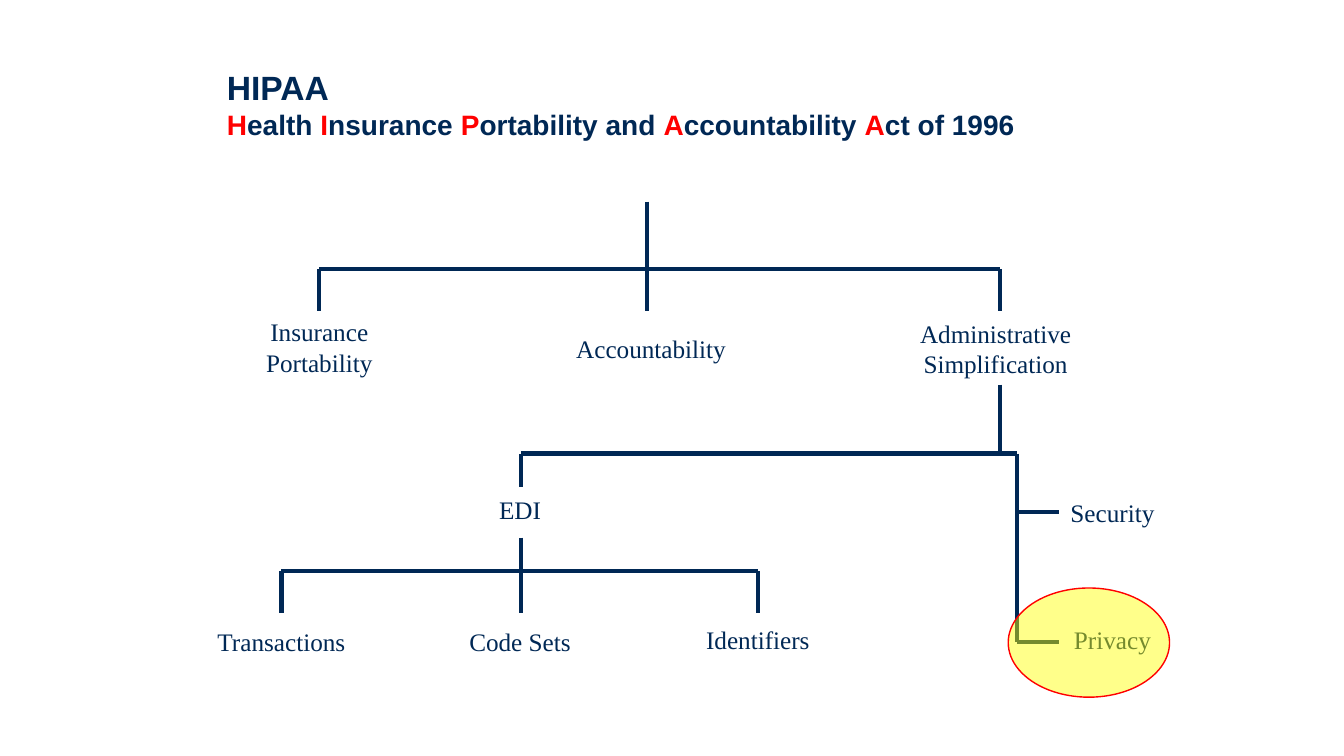
import pptx
import pptx.util
import pptx.dml.color
import pptx.enum.shapes
import pptx.enum.text
import pptx.oxml
import pptx.oxml.ns

RGB = pptx.dml.color.RGBColor
THEME = {
    "navy": RGB(0x00, 0x28, 0x55), "red": RGB(0xFF, 0x00, 0x00),
    "yellow": RGB(0xFF, 0xFF, 0x00), "opacity": 46,
    "title_font": "Arial", "label_font": "Times New Roman",
    "title_size": 24, "subtitle_size": 20, "label_size": 18,
    "line": 3, "outline": 1,
}

prs = pptx.Presentation()
prs.slide_width, prs.slide_height = pptx.util.Inches(13.33), pptx.util.Inches(7.5)
s = prs.slides.add_slide(prs.slide_layouts[5])

# Square grid: 90 rows to the slide's height, about 160 columns across
CELL = prs.slide_height / 90


def grid(*cells):
    return [round(c * CELL) for c in cells]


def add_line(*ends):
    c = s.shapes.add_connector(pptx.enum.shapes.MSO_CONNECTOR.STRAIGHT, *grid(*ends))
    c.line.color.rgb = THEME["navy"]
    c.line.width = pptx.util.Pt(THEME["line"])
    pptx.oxml.ns.qn("a:effectLst")
    c._element.spPr.append(pptx.oxml.parse_xml(
        "<a:effectLst %s/>" % pptx.oxml.ns.nsdecls("a")))


# Title, with the initials of the act in red
title = s.shapes.title
title.left, title.top, title.width, title.height = grid(27, 8, 102, 15)
tf = title.text_frame
for name, value in {
    "margin_left": 0, "margin_top": 0, "margin_right": 0, "margin_bottom": 0,
    "word_wrap": True, "auto_size": pptx.enum.text.MSO_AUTO_SIZE.NONE,
    "vertical_anchor": pptx.enum.text.MSO_ANCHOR.TOP,
}.items():
    setattr(tf, name, value)
p = tf.paragraphs[0]
p.alignment = pptx.enum.text.PP_ALIGN.LEFT
title_runs = [("HIPAA", "title_size", "navy")]
for initial, rest in [("H", "ealth "), ("I", "nsurance "), ("P", "ortability and "),
                      ("A", "ccountability "), ("A", "ct of 1996")]:
    title_runs += [(initial, "subtitle_size", "red"), (rest, "subtitle_size", "navy")]
for i, (text, size, color) in enumerate(title_runs):
    if i == 1:
        p.add_line_break()
    r = p.add_run()
    r.text = text
    r.font.name, r.font.bold = THEME["title_font"], True
    r.font.size = pptx.util.Pt(THEME[size])
    r.font.color.rgb = THEME[color]

# Brackets: stem column, stem top, bar row, then column and bottom of each drop
brackets = [
    (77, 24, 32, [(38, 37), (77, 37), (119, 37)]),
    (119, 45.8, 54, [(62, 58), (121, 76.4)]),
    (62, 64, 68, [(33.5, 73), (62, 73), (90.25, 73)]),
]
for stem, top, bar, drops in brackets:
    add_line(stem, top, stem, bar)
    add_line(drops[0][0], bar, drops[-1][0], bar)
    for x, bottom in drops:
        add_line(x, bar, x, bottom)

# Side branches to Security and Privacy
for y in (61, 76.4):
    add_line(121, y, 126, y)

# Labels: text, left, top, width, height
labels = [
    ("Insurance Portability", 28, 37.1, 20, 8.5),
    ("Administrative Simplification", 103, 37.3, 31, 8.5),
    ("Accountability", 66, 39.1, 23, 4.8),
    ("EDI", 50.4, 58.2, 23, 4.8),
    ("Transactions", 22, 74, 23, 4.8),
    ("Code Sets", 50.4, 74, 23, 4.8),
    ("Identifiers", 78.7, 73.7, 23, 4.8),
    ("Security", 125.6, 58.6, 13.6, 4.8),
    ("Privacy", 125.6, 73.7, 13.6, 4.8),
]
for text, *box in labels:
    tf = s.shapes.add_textbox(*grid(*box)).text_frame
    tf.word_wrap = True
    tf.auto_size = pptx.enum.text.MSO_AUTO_SIZE.SHAPE_TO_FIT_TEXT
    p = tf.paragraphs[0]
    p.alignment = pptx.enum.text.PP_ALIGN.CENTER
    r = p.add_run()
    r.text = text
    r.font.name = THEME["label_font"]
    r.font.size = pptx.util.Pt(THEME["label_size"])
    r.font.color.rgb = THEME["navy"]

# Translucent highlight over Privacy
sp = s.shapes.add_shape(pptx.enum.shapes.MSO_SHAPE.OVAL, *grid(120, 70, 19.2, 13))
sp.shadow.inherit = False
sp.fill.solid()
sp.fill.fore_color.rgb = THEME["yellow"]
sp.line.color.rgb = THEME["red"]
sp.line.width = pptx.util.Pt(THEME["outline"])
fill_color = sp._element.spPr.find(
    pptx.oxml.ns.qn("a:solidFill") + "/" + pptx.oxml.ns.qn("a:srgbClr"))
fill_color.append(pptx.oxml.parse_xml('<a:alpha %s val="%d"/>' % (
    pptx.oxml.ns.nsdecls("a"), THEME["opacity"] * 1000)))

prs.save("out.pptx")
